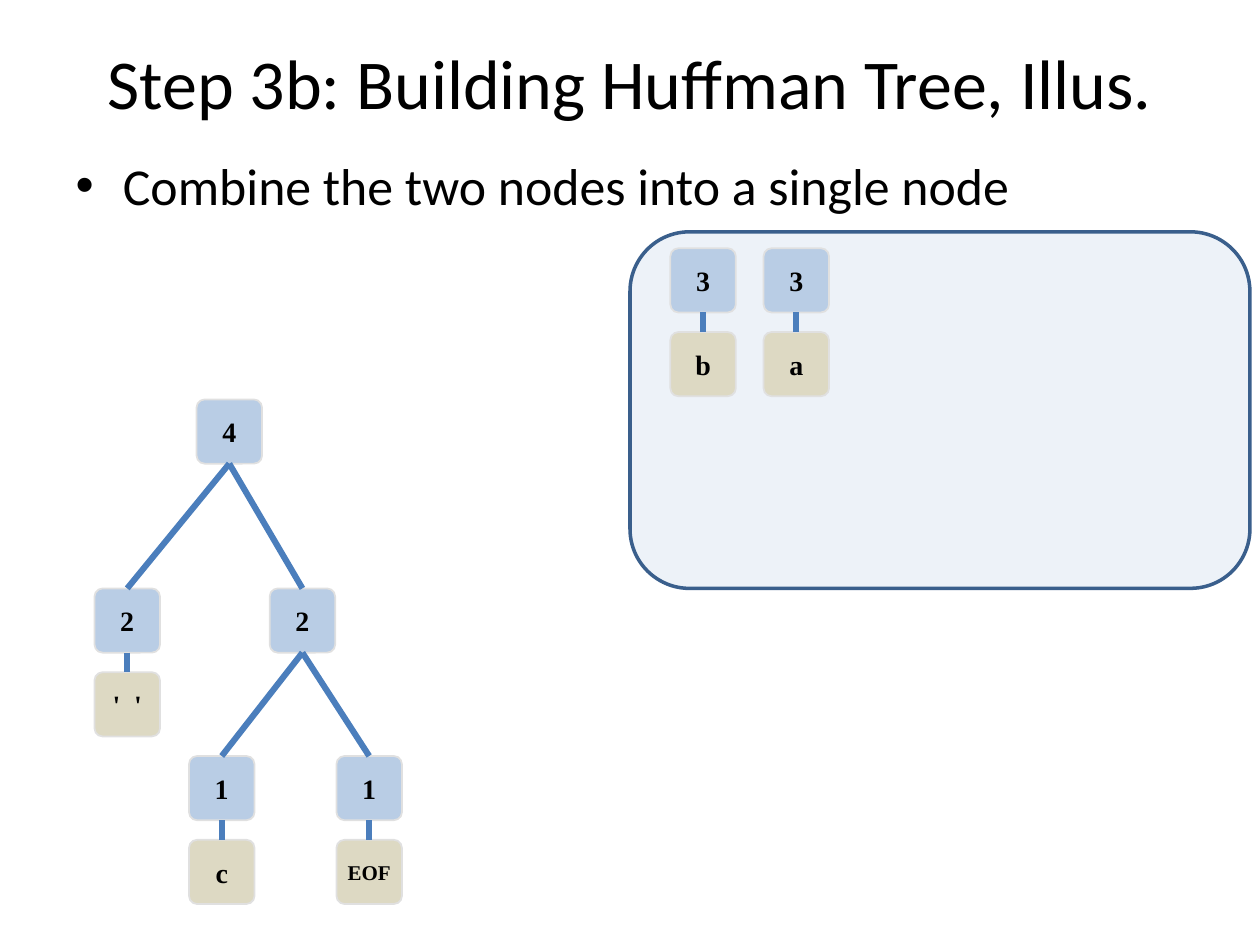
from lxml.etree import SubElement
from pptx import Presentation
from pptx.dml.color import RGBColor
from pptx.enum.shapes import MSO_CONNECTOR, MSO_SHAPE
from pptx.enum.text import MSO_ANCHOR, MSO_AUTO_SIZE, PP_ALIGN
from pptx.oxml.ns import qn
from pptx.util import Inches, Pt

COLORS = {
    "text": "000000",
    "count": "B9CDE5",
    "leaf": "DDD9C3",
    "edge": "E0E0E0",
    "link": "4B7EBC",
    "panel": "4F81BD",
    "rim": "3A5F8C",
}
WIDTH, HEIGHT = 10, 7.5
COL, ROW = WIDTH / 100, HEIGHT / 75
NODE_W, NODE_H, DROP = 5.2, 5.1, 6.65
TOP, BOTTOM = 0, 2


def color(name):
    return RGBColor.from_string(COLORS[name])


def place(col, row, cols, rows):
    return Inches(col * COL), Inches(row * ROW), Inches(cols * COL), Inches(rows * ROW)


def style(run, font, size, bold=False):
    run.font.name = font
    run.font.size = Pt(size)
    run.font.bold = bold
    run.font.color.rgb = color("text")


def add_block(slide, box, fill, rim, width):
    block = slide.shapes.add_shape(MSO_SHAPE.ROUNDED_RECTANGLE, *box)
    block.shadow.inherit = False
    block.fill.solid()
    block.fill.fore_color.rgb = color(fill)
    block.line.color.rgb = color(rim)
    block.line.width = Pt(width)
    return block


def add_panel(slide):
    panel = add_block(slide, place(50, 18.4, 49.2, 28.3), "panel", "rim", 2)
    tint = panel.fill._xPr.find(qn("a:solidFill"))[0]
    SubElement(tint, qn("a:alpha"), val="10000")


def add_node(slide, col, row, text, fill="count", size=16):
    node = add_block(slide, place(col, row, NODE_W, NODE_H), fill, "edge", 1)
    node.adjustments[0] = 0.126
    frame = node.text_frame
    frame.word_wrap = False
    frame.vertical_anchor = MSO_ANCHOR.MIDDLE
    frame.text = text
    para = frame.paragraphs[0]
    para.alignment = PP_ALIGN.CENTER
    style(para.runs[0], "Times New Roman", size, True)
    return node


def add_link(slide, parent, child):
    link = slide.shapes.add_connector(MSO_CONNECTOR.STRAIGHT, 0, 0, 0, 0)
    link.begin_connect(parent, BOTTOM)
    link.end_connect(child, TOP)
    link.line.color.rgb = color("link")
    link.line.width = Pt(3.5)
    SubElement(link._element.spPr, qn("a:effectLst"))


def add_pair(slide, col, row, count, char, size=16):
    node = add_node(slide, col, row, count)
    leaf = add_node(slide, col, row + DROP, char, "leaf", size)
    add_link(slide, node, leaf)
    return node


def add_parent(slide, col, row, count, kids):
    node = add_node(slide, col, row, count)
    for kid in kids:
        add_link(slide, node, kid)
    return node


def fill_holder(holder, box, text, size):
    holder.left, holder.top, holder.width, holder.height = place(*box)
    frame = holder.text_frame
    frame.text = text
    frame.auto_size = MSO_AUTO_SIZE.NONE
    style(frame.paragraphs[0].runs[0], "Calibri", size)


def main():
    deck = Presentation()
    deck.slide_width, deck.slide_height = Inches(WIDTH), Inches(HEIGHT)
    slide = deck.slides.add_slide(deck.slide_layouts[1])
    add_panel(slide)
    fill_holder(slide.shapes.title, (5, 3, 90, 7),
                "Step 3b: Building Huffman Tree, Illus.", 40)
    fill_holder(slide.placeholders[1], (5, 11.7, 90, 5),
                "Combine the two nodes into a single node", 29.6)

    for col, char in ((53.2, "b"), (60.6, "a")):
        add_pair(slide, col, 19.7, "3", char)

    space = add_pair(slide, 7.5, 46.7, "2", "'  '")
    end = add_pair(slide, 26.7, 60, "1", "EOF", 12)
    letter = add_pair(slide, 15, 60, "1", "c")
    inner = add_parent(slide, 21.4, 46.7, "2", (letter, end))
    add_parent(slide, 15.6, 31.7, "4", (space, inner))
    deck.save("out.pptx")


if __name__ == "__main__":
    main()
